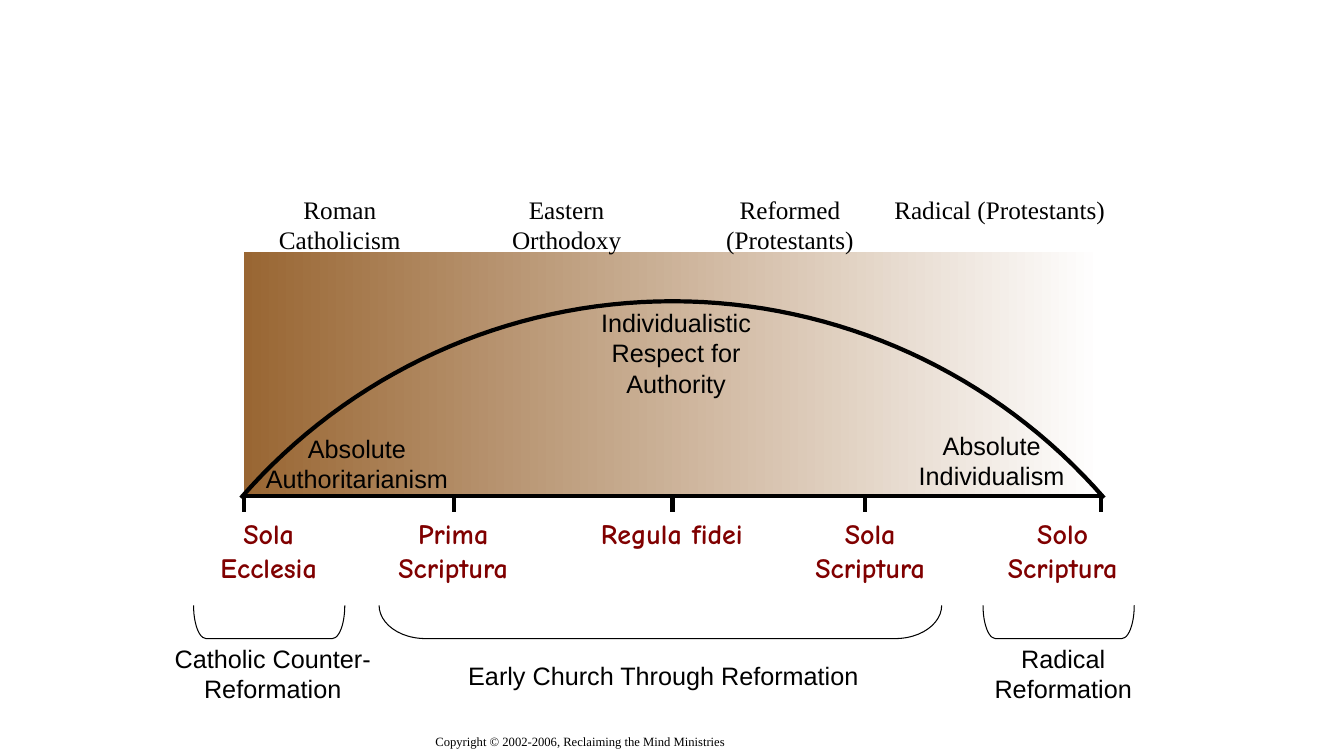
from dataclasses import dataclass
from math import asin, cos, sin

from lxml.etree import SubElement
from pptx import Presentation
from pptx.dml.color import RGBColor
from pptx.enum.shapes import MSO_CONNECTOR, MSO_SHAPE
from pptx.enum.text import MSO_AUTO_SIZE, PP_ALIGN
from pptx.oxml.ns import qn
from pptx.util import Inches, Pt

# Content: text, left, top, width, height
CHURCHES = [
    ("Roman Catholicism", 2.33, 1.88, 2.08, 0.7),
    ("Eastern Orthodoxy", 4.58, 1.88, 2.08, 0.7),
    ("Reformed (Protestants)", 6.67, 1.88, 2.33, 0.7),
    ("Radical (Protestants)", 8.75, 1.88, 2.33, 0.7),
]
VIEWS = [
    ("Absolute Authoritarianism", 2.5, 4.25, 2.08, 0.7),
    ("Individualistic Respect for Authority", 5.83, 3, 1.75, 1),
    ("Absolute Individualism", 8.92, 4.22, 1.83, 0.7),
]
TERMS = [
    ("Sola Ecclesia", 2, 5.08, 1.33, 0.77),
    ("Prima Scriptura", 3.58, 5.08, 1.83, 0.77),
    ("Regula fidei", 5.83, 5.08, 1.67, 0.43),
    ("Sola Scriptura", 7.92, 5.08, 1.42, 0.77),
    ("Solo Scriptura", 9.83, 5.08, 1.42, 0.77),
]
ERAS = [
    ("Catholic Counter-Reformation", 1.58, 6.33, 2.25, 0.7),
    ("Early Church Through Reformation", 4.33, 6.5, 4.5, 0.4),
    ("Radical Reformation", 9.42, 6.33, 2.25, 0.7),
]
NOTICE = ("Copyright © 2002-2006, Reclaiming the Mind Ministries", 4.22, 7.23, 4.67, 0.27)
TICKS = [2.42, 4.5, 6.67, 8.58, 10.92]
BRACES = [(2.67, 1.5), (6.55, 5.58), (10.5, 1.5)]  # centre, span
BAND = (2.42, 2.5, 8.5, 2.42)
AXIS, FOOT = 4.92, 5.08
BRACE_MID, DEPTH = 6.17, 0.33
ARC_MID, ARC_BASE, ARC_HALF, RADIUS, STEPS = 6.67, 4.94, 4.28, 5.67, 64


@dataclass(frozen=True)
class Theme:
    ink: RGBColor = RGBColor(0, 0, 0)
    wine: RGBColor = RGBColor(0x80, 0, 0)
    brown: RGBColor = RGBColor(0x99, 0x66, 0x33)
    white: RGBColor = RGBColor(0xFF, 0xFF, 0xFF)
    serif: str = "Times New Roman"
    sans: str = "Arial"
    comic: str = "Comic Neue"
    label: int = 18
    term: int = 20
    notice: int = 9
    thick: float = 3
    thin: float = 0.75


T = Theme()


def box(item):
    return [Inches(v) for v in item]


def write(slide, item, face, size, color=T.ink, bold=False, align=PP_ALIGN.CENTER):
    frame = slide.shapes.add_textbox(*box(item[1:])).text_frame
    frame.word_wrap = True
    frame.auto_size = MSO_AUTO_SIZE.SHAPE_TO_FIT_TEXT
    para = frame.paragraphs[0]
    para.alignment = align
    run = para.add_run()
    run.text = item[0]
    font = run.font
    font.name, font.size, font.bold = face, Pt(size), bold
    font.color.rgb = color


def stroke(shape, width):
    shape.line.color.rgb = T.ink
    shape.line.width = Pt(width)


def rule(slide, x1, y1, x2, y2):
    line = slide.shapes.add_connector(MSO_CONNECTOR.STRAIGHT, *box((x1, y1, x2, y2)))
    stroke(line, T.thick)
    SubElement(line._element.spPr, qn("a:effectLst"))


def band(slide):
    shape = slide.shapes.add_shape(MSO_SHAPE.RECTANGLE, *box(BAND))
    shape.shadow.inherit = False
    shape.fill.gradient()
    shape.fill.gradient_angle = 0
    for stop, place, color in zip(shape.fill.gradient_stops, (0, 1), (T.brown, T.white)):
        stop.position, stop.color.rgb = place, color
    shape.line.fill.background()


def arch(slide):
    # A circle's arc that stands on the axis
    reach = asin(ARC_HALF / RADIUS)
    turns = [reach * (2 * i / STEPS - 1) for i in range(STEPS + 1)]
    points = [
        (Inches(ARC_MID + RADIUS * sin(t)),
         Inches(ARC_BASE - RADIUS * (cos(t) - cos(reach))))
        for t in turns
    ]
    path = slide.shapes.build_freeform(*points[0])
    path.add_line_segments(points[1:], close=False)
    shape = path.convert_to_shape()
    shape.shadow.inherit = False
    shape.fill.background()
    stroke(shape, T.thick)


def brace(slide, mid, span):
    place = (mid - DEPTH / 2, BRACE_MID - span / 2, DEPTH, span)
    shape = slide.shapes.add_shape(MSO_SHAPE.LEFT_BRACKET, *box(place))
    shape.rotation = 270
    shape.adjustments[0] = span / 4
    shape.shadow.inherit = False
    shape.fill.background()
    stroke(shape, T.thin)


def main():
    deck = Presentation()
    deck.slide_width, deck.slide_height = Inches(13.33), Inches(7.5)
    slide = deck.slides.add_slide(deck.slide_layouts[6])

    # Copyright line
    write(slide, NOTICE, T.serif, T.notice, align=PP_ALIGN.LEFT)

    # Spectrum, axis and arch
    band(slide)
    rule(slide, TICKS[0], AXIS, TICKS[-1], AXIS)
    for x in TICKS:
        rule(slide, x, AXIS, x, FOOT)
    arch(slide)

    # Era brackets
    for mid, span in BRACES:
        brace(slide, mid, span)

    # Labels
    for item in CHURCHES:
        write(slide, item, T.serif, T.label)
    for item in VIEWS + ERAS:
        write(slide, item, T.sans, T.label)
    for item in TERMS:
        write(slide, item, T.comic, T.term, T.wine, True)

    deck.save("out.pptx")


if __name__ == "__main__":
    main()
